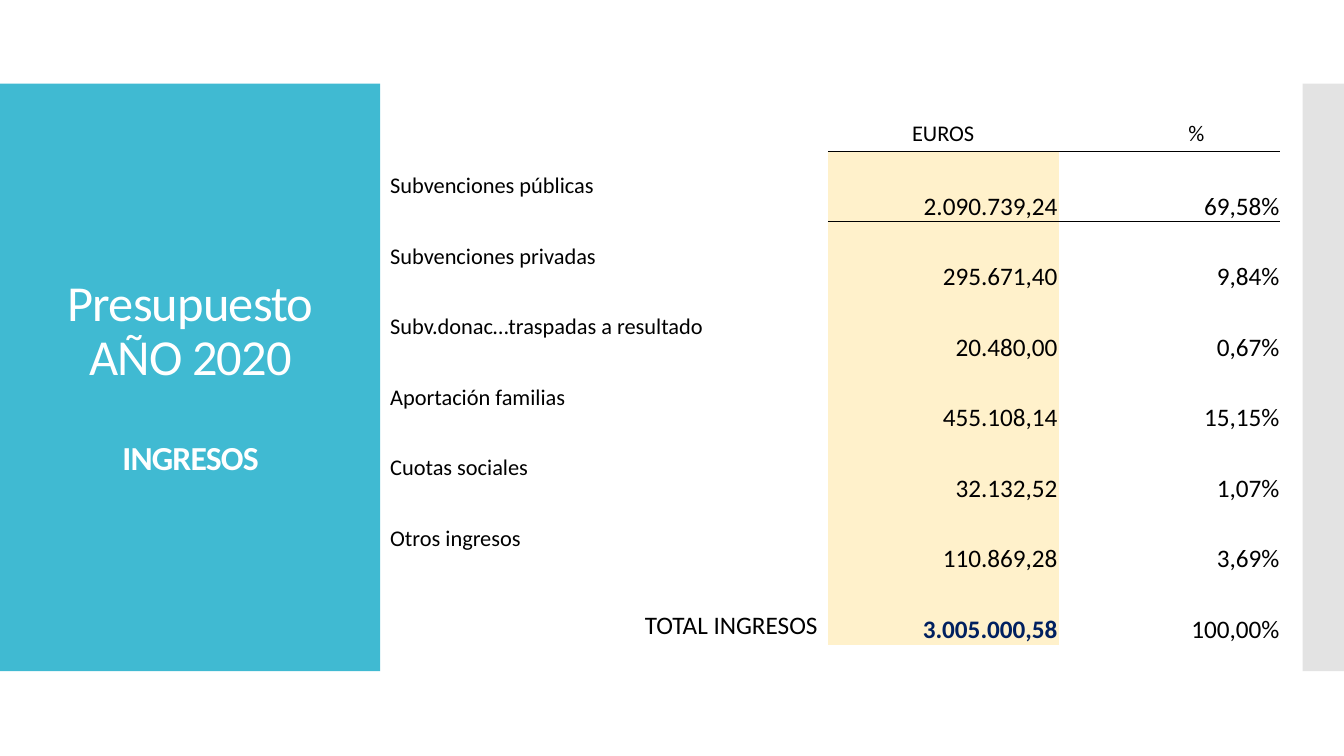
from copy import deepcopy

from lxml import etree
from pptx import Presentation
from pptx import util as u
from pptx.dml.color import RGBColor
from pptx.enum import shapes, text
from pptx.oxml.ns import qn

PX = 9144
THEME = {
    "font": "Calibri",
    "white": RGBColor(0xFF, 0xFF, 0xFF),
    "black": RGBColor(0, 0, 0),
    "teal": RGBColor(0x40, 0xBA, 0xD2),
    "gray": RGBColor(0xC8, 0xC8, 0xC8),
    "cream": RGBColor(0xFF, 0xF1, 0xCB),
    "navy": RGBColor(0x00, 0x20, 0x60),
    "title": 36,
    "subtitle": 24,
    "label": 16,
    "figure": 18,
}
NO_STYLE = "{2D5ABB26-0587-4C30-8999-92F81FD0307C}"
ALIGN, ANCHOR = text.PP_ALIGN, text.MSO_ANCHOR


def style_run(run, size, color, bold=False):
    run.font.name = THEME["font"]
    run.font.size = u.Pt(size)
    run.font.color.rgb = color
    run.font.bold = bold


def fill_cell(cell, wording, size, align, anchor, color=THEME["black"], bold=False):
    cell.vertical_anchor = anchor
    line = cell.text_frame.paragraphs[0]
    line.text = wording
    line.alignment = align
    style_run(line.runs[0], size, color, bold)
    return line


prs = Presentation()
prs.slide_width, prs.slide_height = u.Emu(1333 * PX), u.Emu(750 * PX)
slide = prs.slides.add_slide(prs.slide_layouts[5])

for left, width, color, alpha in [(0, 377, "teal", 100), (1292, 41, "gray", 50)]:
    band = slide.shapes.add_shape(
        shapes.MSO_SHAPE.RECTANGLE, left * PX, 83 * PX, width * PX, 583 * PX)
    band.shadow.inherit = False
    band.fill.solid()
    band.fill.fore_color.rgb = THEME[color]
    band.line.fill.background()
    tint = band.fill._xPr.find(qn("a:solidFill"))[0]
    etree.SubElement(tint, qn("a:alpha"), val=str(alpha * 1000))

income = [
    ("Subvenciones públicas", "2.090.739,24", "69,58%"),
    ("Subvenciones privadas", "295.671,40", "9,84%"),
    ("Subv.donac…traspadas a resultado", "20.480,00", "0,67%"),
    ("Aportación familias", "455.108,14", "15,15%"),
    ("Cuotas sociales", "32.132,52", "1,07%"),
    ("Otros ingresos", "110.869,28", "3,69%"),
    ("TOTAL INGRESOS", "3.005.000,58", "100,00%"),
]
widths = [401, 43, 229, 53, 167]
row_height = 70
total_row = len(income)
EUROS, PERCENT = 2, 4

budget_frame = slide.shapes.add_table(
    total_row + 1, len(widths), 377 * PX, 80 * PX,
    sum(widths) * PX, (total_row + 1) * row_height * PX)
budget = budget_frame.table
budget.first_row = budget.horz_banding = False
budget._tbl.tblPr.find(qn("a:tableStyleId")).text = NO_STYLE
for column, width in zip(budget.columns, widths):
    column.width = u.Emu(width * PX)
for row in budget.rows:
    row.height = u.Emu(row_height * PX)
for cell in budget.iter_cells():
    cell.fill.background()

for col, heading in [(EUROS, "EUROS"), (PERCENT, "%")]:
    line = fill_cell(budget.cell(0, col), heading, THEME["label"], ALIGN.CENTER, ANCHOR.BOTTOM)
    line.line_spacing = 0.87

budget.cell(total_row, 0).merge(budget.cell(total_row, 1))
for row, (source, euros, percent) in enumerate(income, start=1):
    is_total = row == total_row
    line = fill_cell(
        budget.cell(row, 0), source,
        THEME["figure"] if is_total else THEME["label"],
        ALIGN.RIGHT if is_total else ALIGN.LEFT,
        ANCHOR.BOTTOM if is_total else ANCHOR.MIDDLE)
    line.line_spacing = 0.87
    for col, amount in [(EUROS, euros), (PERCENT, percent)]:
        cell = budget.cell(row, col)
        cell.margin_left = cell.margin_right = cell.margin_top = u.Emu(PX)
        cell.margin_bottom = 0
        strong = is_total and col == EUROS
        fill_cell(cell, amount, THEME["figure"], ALIGN.RIGHT, ANCHOR.BOTTOM,
                  THEME["navy" if strong else "black"], strong)
    budget.cell(row, EUROS).fill.solid()
    budget.cell(row, EUROS).fill.fore_color.rgb = THEME["cream"]

for row, side in [(0, "a:lnB"), (1, "a:lnT")]:
    for col in range(EUROS, PERCENT + 1):
        props = budget.cell(row, col)._tc.get_or_add_tcPr()
        rule = etree.Element(qn(side), w=str(u.Pt(1)))
        ink = etree.SubElement(rule, qn("a:solidFill"))
        etree.SubElement(ink, qn("a:srgbClr"), val=str(THEME["black"]))
        props.insert(0, rule)

title = slide.shapes.title
title.left, title.top, title.width, title.height = (
    u.Emu(n * PX) for n in (28, 123, 322, 503))
frame = title.text_frame
frame.word_wrap = True
frame.auto_size = text.MSO_AUTO_SIZE.NONE
frame.vertical_anchor = ANCHOR.MIDDLE
heading = frame.paragraphs[0]
heading.text = "Presupuesto\vAÑO 2020\v\vINGRESOS"
heading.alignment = ALIGN.CENTER
heading.line_spacing = 0.9
for run in heading.runs:
    is_subtitle = run.text == "INGRESOS"
    style_run(run, THEME["subtitle" if is_subtitle else "title"], THEME["white"], is_subtitle)
    run.font._element.set("spc", "-60")
for line_break in heading._p.findall(qn("a:br")):
    line_break.append(deepcopy(heading.runs[0].font._element))
slide.shapes._spTree.append(title._element)

prs.save("out.pptx")
